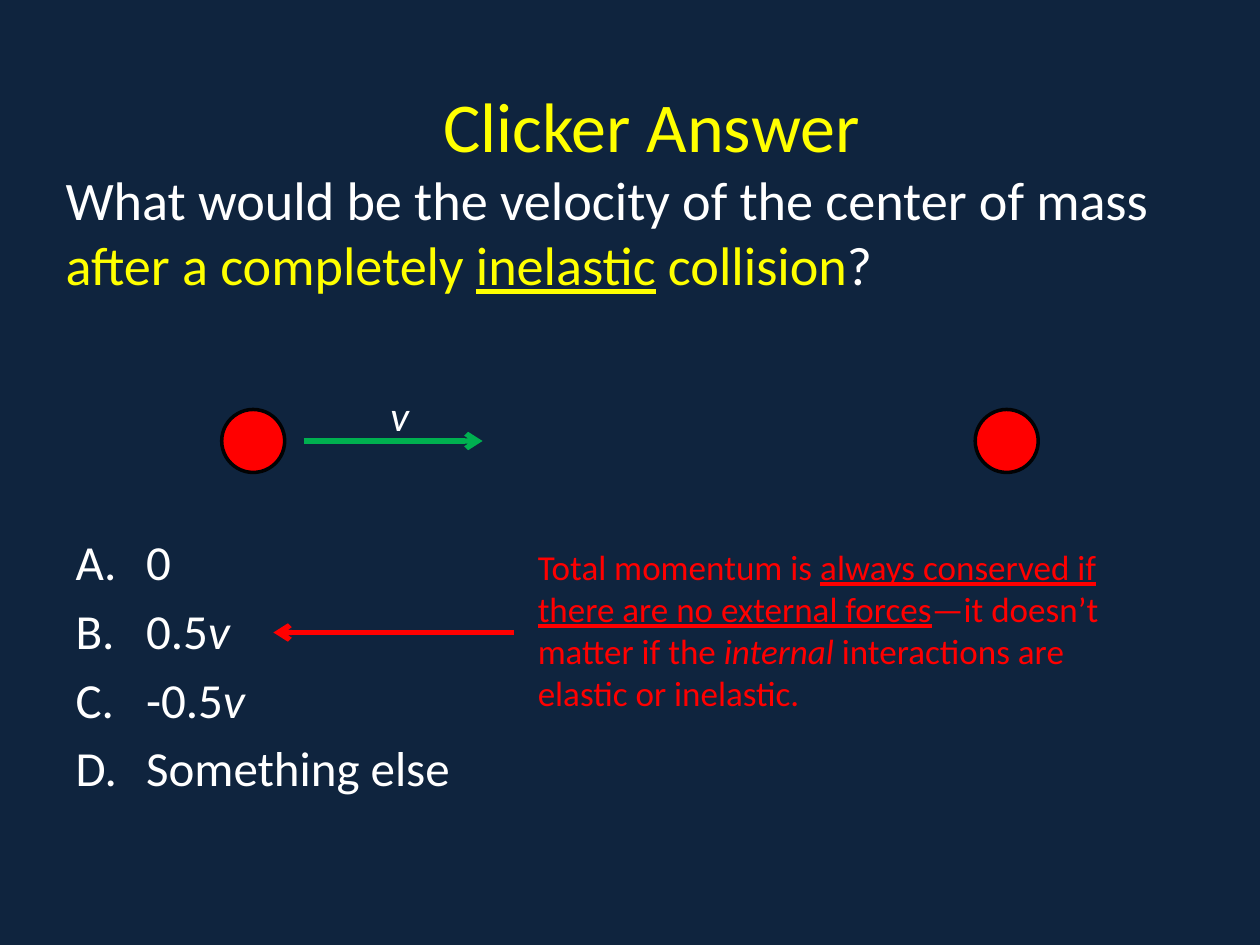
from lxml import etree
from pptx import Presentation
from pptx.dml.color import RGBColor
from pptx.enum.shapes import MSO_CONNECTOR, MSO_SHAPE
from pptx.enum.text import MSO_ANCHOR, MSO_AUTO_SIZE, PP_ALIGN
from pptx.oxml.ns import qn
from pptx.util import Inches, Pt

OVAL = MSO_SHAPE.OVAL
LINE = MSO_CONNECTOR.STRAIGHT
LEFT = PP_ALIGN.LEFT
TOP, MIDDLE = MSO_ANCHOR.TOP, MSO_ANCHOR.MIDDLE
NO_FIT = MSO_AUTO_SIZE.NONE

FONT = "Calibri"
NAVY, WHITE, BLACK = "0F243E", "FFFFFF", "010203"
YELLOW, RED, GREEN = "FFFF00", "FF0000", "00B050"


def color(code):
    return RGBColor.from_string(code)


def place(shape, left, top, width, height):
    shape.left, shape.top = Inches(left), Inches(top)
    shape.width, shape.height = Inches(width), Inches(height)


def write(para, parts, size, tint):
    """Add runs given as (text, style); style may hold color, italic, underline."""
    para.alignment = LEFT
    for text, style in parts:
        run = para.add_run()
        run.text = text
        font = run.font
        font.name, font.size = FONT, Pt(size)
        font.color.rgb = color(style.get("color", tint))
        font.italic = style.get("italic", False)
        font.underline = style.get("underline", False)


def indent(para, left, first):
    props = para._p.get_or_add_pPr()
    props.set("marL", str(Inches(left)))
    props.set("indent", str(Inches(first)))
    return props


def set_frame(shape, anchor):
    frame = shape.text_frame
    frame.word_wrap = True
    frame.auto_size = NO_FIT
    frame.vertical_anchor = anchor
    return frame


def add_title(slide, head, parts):
    shape = slide.shapes.title
    place(shape, 0.42, 0.17, 9, 2.67)
    frame = set_frame(shape, MIDDLE)
    first, second = frame.paragraphs[0], frame.add_paragraph()
    write(first, [(head, {})], 40, YELLOW)
    indent(first, 3, 0)
    write(second, parts, 31, WHITE)
    indent(second, 0, 0)


def add_choices(slide, items):
    shape = slide.placeholders[1]
    place(shape, 0.5, 4.17, 9, 2.92)
    frame = set_frame(shape, TOP)
    for i, parts in enumerate(items):
        para = frame.add_paragraph() if i else frame.paragraphs[0]
        write(para, parts, 28, WHITE)
        props = indent(para, 0.56, -0.56)
        etree.SubElement(props, qn("a:buFont"), typeface="+mj-lt")
        etree.SubElement(props, qn("a:buAutoNum"), type="alphaUcPeriod")


def add_ball(slide, left):
    ball = slide.shapes.add_shape(
        OVAL, Inches(left), Inches(3.25), Inches(0.5), Inches(0.5))
    ball.shadow.inherit = False
    ball.fill.solid()
    ball.fill.fore_color.rgb = color(RED)
    ball.line.color.rgb = color(BLACK)
    ball.line.width = Pt(2)


def add_arrow(slide, start, end, y, tint):
    arrow = slide.shapes.add_connector(
        LINE, Inches(start), Inches(y), Inches(end), Inches(y))
    arrow.line.color.rgb = color(tint)
    arrow.line.width = Pt(3)
    etree.SubElement(arrow.line._get_or_add_ln(), qn("a:tailEnd"), type="arrow")
    etree.SubElement(arrow._element.spPr, qn("a:effectLst"))


def add_note(slide, box, parts, size, tint):
    shape = slide.shapes.add_textbox(*map(Inches, box))
    frame = set_frame(shape, TOP)
    write(frame.paragraphs[0], parts, size, tint)


def main():
    deck = Presentation()
    deck.slide_width, deck.slide_height = Inches(10), Inches(7.5)
    slide = deck.slides.add_slide(deck.slide_layouts[1])
    slide.background.fill.solid()
    slide.background.fill.fore_color.rgb = color(NAVY)

    # Question and choices
    add_title(slide, "Clicker Answer", [
        ("What would be the velocity of the center of mass ", {}),
        ("after a completely ", {"color": YELLOW}),
        ("inelastic", {"color": YELLOW, "underline": True}),
        (" collision", {"color": YELLOW}),
        ("?", {}),
    ])
    speed = ("v", {"italic": True})
    add_choices(slide, [
        [("0", {})],
        [("0.5", {}), speed],
        [("-0.5", {}), speed],
        [("Something else", {})],
    ])

    # Moving ball and resting ball
    for left in (1.76, 7.74):
        add_ball(slide, left)
    add_arrow(slide, 2.41, 3.83, 3.5, GREEN)
    add_note(slide, (3, 3.04, 0.5, 0.5), [speed], 24, WHITE)

    # Answer with its reason
    add_arrow(slide, 4.08, 2.17, 5.02, RED)
    add_note(slide, (4.17, 4.28, 4.67, 1.45), [
        ("Total momentum is ", {}),
        ("always conserved if there are no external forces",
         {"underline": True}),
        ("—it doesn’t matter if the ", {}),
        ("internal ", {"italic": True}),
        ("interactions are elastic or inelastic.", {}),
    ], 20, RED)

    deck.save("out.pptx")


if __name__ == "__main__":
    main()
